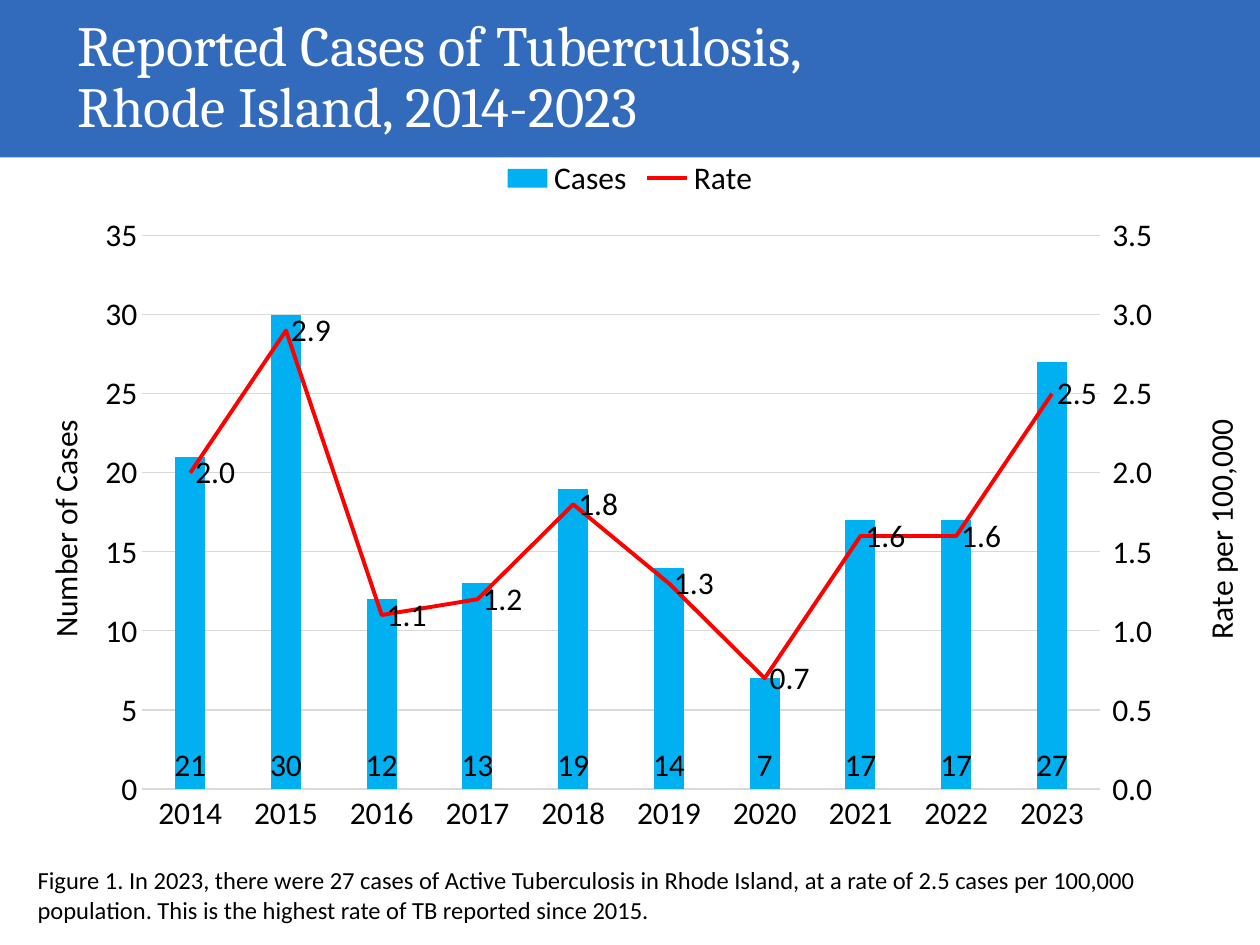
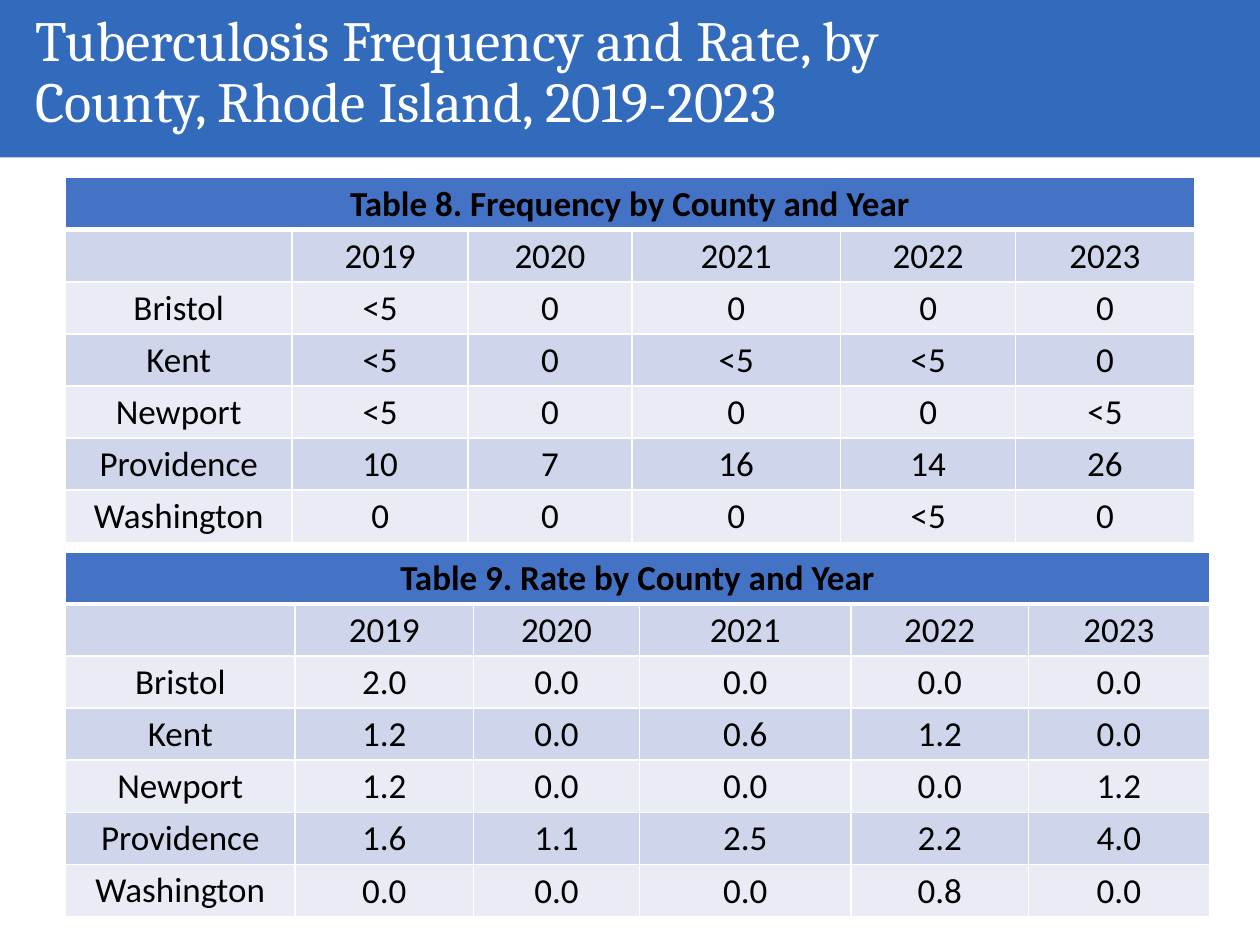
from copy import deepcopy

from lxml.etree import SubElement
from pptx import Presentation
from pptx.chart.axis import ValueAxis
from pptx.chart.data import CategoryChartData
from pptx.dml.color import RGBColor
from pptx.enum.chart import XL_CHART_TYPE as ChartType
from pptx.enum.chart import XL_LABEL_POSITION as LabelPosition
from pptx.enum.chart import XL_LEGEND_POSITION as LegendPosition
from pptx.enum.chart import XL_MARKER_STYLE as MarkerStyle
from pptx.enum.chart import XL_TICK_MARK as TickMark
from pptx.enum.shapes import MSO_SHAPE as Shape
from pptx.enum.text import MSO_ANCHOR as Anchor
from pptx.enum.text import PP_ALIGN as Align
from pptx.oxml import parse_xml
from pptx.oxml.ns import nsdecls, qn
from pptx.util import Inches, Pt

WIDTH, HEIGHT = 10, 7.5
BAND_HEIGHT = HEIGHT / 6
BODY_FONT, TITLE_FONT = "Calibri", "Cambria"
COLORS = {
    "band": "326ABC", "white": "FFFFFF", "text": "000000", "grid": "D9D9D9",
    "cases": "00B0F0", "rate": "FF0000",
    "header": "4472C4", "odd": "CFD5EA", "even": "E9EBF5",
}

CASES_TITLE = "Reported Cases of Tuberculosis,\vRhode Island, 2014-2023"
COUNTY_TITLE = "Tuberculosis Frequency and Rate, by County, Rhode Island, 2019-2023"
CAPTION = (
    "Figure 1. In 2023, there were 27 cases of Active Tuberculosis in Rhode Island, "
    "at a rate of 2.5 cases per 100,000 population. "
    "This is the highest rate of TB reported since 2015."
)
CHART_YEARS = [str(year) for year in range(2014, 2024)]
CASES = [21, 30, 12, 13, 19, 14, 7, 17, 17, 27]
RATES = [2, 2.9, 1.1, 1.2, 1.8, 1.3, 0.7, 1.6, 1.6, 2.5]

TABLE_YEARS = ["", "2019", "2020", "2021", "2022", "2023"]
COLUMN_SHARES = [1.8, 1.4, 1.3, 1.66, 1.39, 1.42]
ROW_HEIGHT = 0.41
FREQUENCIES = [
    ["Bristol", "<5", "0", "0", "0", "0"],
    ["Kent", "<5", "0", "<5", "<5", "0"],
    ["Newport", "<5", "0", "0", "0", "<5"],
    ["Providence", "10", "7", "16", "14", "26"],
    ["Washington", "0", "0", "0", "<5", "0"],
]
COUNTY_RATES = [
    ["Bristol", "2.0", "0.0", "0.0", "0.0", "0.0"],
    ["Kent", "1.2", "0.0", "0.6", "1.2", "0.0"],
    ["Newport", "1.2", "0.0", "0.0", "0.0", "1.2"],
    ["Providence", "1.6", "1.1", "2.5", "2.2", "4.0"],
    ["Washington", "0.0", "0.0", "0.0", "0.8", "0.0"],
]
TABLES = [
    ("Table 8. Frequency by County and Year", FREQUENCIES, 1.41, 8.96),
    ("Table 9. Rate by County and Year", COUNTY_RATES, 4.38, 9.08),
]


def color(name):
    return RGBColor.from_string(COLORS[name])


def paint(fill, name):
    fill.solid()
    fill.fore_color.rgb = color(name)


def style_font(font, size, name="text", family=BODY_FONT, bold=False):
    font.size, font.name, font.bold = Pt(size), family, bold
    font.color.rgb = color(name)


def add_text(slide, text, box, anchor=Anchor.TOP):
    frame = slide.shapes.add_textbox(*map(Inches, box)).text_frame
    frame.word_wrap = True
    frame.vertical_anchor = anchor
    frame.text = text
    return frame.paragraphs[0]


def add_titled_slide(presentation, title, left, top):
    slide = presentation.slides.add_slide(presentation.slide_layouts[6])
    band = slide.shapes.add_shape(Shape.RECTANGLE, 0, 0, Inches(WIDTH), Inches(BAND_HEIGHT))
    band.shadow.inherit = False
    band.line.fill.background()
    paint(band.fill, "band")
    paragraph = add_text(slide, title, (left, top, 8, 1.03), Anchor.MIDDLE)
    paragraph.line_spacing = 0.9
    style_font(paragraph.font, 32.4, "white", TITLE_FONT)
    return slide


def remove_children(element, tag):
    for child in element.findall(qn(tag)):
        element.remove(child)


def place(element, index, **shares):
    """Give a chart part a fixed place, as shares of the chart's size."""
    remove_children(element, "c:layout")
    layout = parse_xml(f"<c:layout {nsdecls('c')}><c:manualLayout/></c:layout>")
    manual = layout[0]
    if "w" in shares:
        SubElement(manual, qn("c:layoutTarget"), val="inner")
    for mode in ("xMode", "yMode"):
        SubElement(manual, qn(f"c:{mode}"), val="edge")
    for key, share in shares.items():
        SubElement(manual, qn(f"c:{key}"), val=str(share))
    element.insert(index, layout)


def style_value_axis(axis, title, maximum, number_format, tick_mark, x):
    axis.minimum_scale, axis.maximum_scale = 0, maximum
    axis.major_unit = maximum / 7
    axis.major_tick_mark = tick_mark
    axis.format.line.fill.background()
    axis.tick_labels.number_format = number_format
    axis.tick_labels.number_format_is_linked = False
    style_font(axis.tick_labels.font, 18)
    frame = axis.axis_title.text_frame
    frame.text = title
    style_font(frame.paragraphs[0].font, 18)
    body = frame._txBody.bodyPr
    body.set("rot", "-5400000")
    body.set("vert", "horz")
    place(axis.axis_title._element, 1, x=x, y=0.385)


def move_rate_to_right_axis(chart):
    """Turn the second series into a line with its own pair of axes."""
    plot_area = chart._chartSpace.chart.plotArea
    bars = plot_area.find(qn("c:barChart"))
    rate = bars.findall(qn("c:ser"))[1]
    remove_children(rate, "c:invertIfNegative")
    lines = parse_xml(
        f'<c:lineChart {nsdecls("c")}><c:grouping val="standard"/><c:varyColors val="0"/>'
        '<c:marker val="1"/><c:axId val="501"/><c:axId val="502"/></c:lineChart>'
    )
    lines.insert(2, rate)
    bars.addnext(lines)
    category = deepcopy(plot_area.find(qn("c:catAx")))
    value = deepcopy(plot_area.find(qn("c:valAx")))
    for axis, own, other in ((category, "501", "502"), (value, "502", "501")):
        axis.find(qn("c:axId")).set("val", own)
        axis.find(qn("c:crossAx")).set("val", other)
    category.find(qn("c:delete")).set("val", "1")
    value.find(qn("c:axPos")).set("val", "r")
    value.find(qn("c:crosses")).set("val", "max")
    plot_area.findall(qn("c:valAx"))[-1].addnext(value)
    value.addnext(category)
    return ValueAxis(value)


def label_values(series, position, number_format):
    labels = series.data_labels
    labels.show_value = True
    labels.position = position
    labels.number_format = number_format
    labels.number_format_is_linked = False
    style_font(labels.font, 18)


def add_cases_chart(slide):
    data = CategoryChartData()
    data.categories = CHART_YEARS
    data.add_series("Cases", CASES)
    data.add_series("Rate", RATES, "0.0")
    box = map(Inches, (0, 1.14, WIDTH, 5.58))
    chart = slide.shapes.add_chart(ChartType.COLUMN_CLUSTERED, *box, data).chart
    style_font(chart.font, 18)
    chart.has_title = False
    chart.has_legend = True
    chart.legend.position = LegendPosition.TOP
    chart.legend.include_in_layout = False
    style_font(chart.legend.font, 18)

    years, left_axis = chart.category_axis, chart.value_axis
    right_axis = move_rate_to_right_axis(chart)
    right_axis.has_major_gridlines = False
    style_value_axis(left_axis, "Number of Cases", 35, "0", TickMark.NONE, 0.03)
    style_value_axis(right_axis, "Rate per 100,000", 3.5, "0.0", TickMark.OUTSIDE, 0.947)
    years.major_tick_mark = TickMark.NONE
    style_font(years.tick_labels.font, 18)
    for line in (years.format.line, left_axis.major_gridlines.format.line):
        line.color.rgb = color("grid")
        line.width = Pt(0.75)

    bars, lines = chart.plots
    bars.gap_width = 219
    bars.vary_by_categories = False
    cases, rate = bars.series[0], lines.series[0]
    paint(cases.format.fill, "cases")
    label_values(cases, LabelPosition.INSIDE_BASE, "0")
    rate.format.line.color.rgb = color("rate")
    rate.format.line.width = Pt(2.25)
    rate.marker.style = MarkerStyle.NONE
    rate.smooth = False
    label_values(rate, LabelPosition.RIGHT, "0.0")
    place(chart._chartSpace.chart.plotArea, 0, x=0.113, y=0.131, w=0.76, h=0.787)


def add_borders(cell, top, bottom):
    properties = cell._tc.get_or_add_tcPr()
    for index, (side, width) in enumerate((("L", 1), ("R", 1), ("T", top), ("B", bottom))):
        properties.insert(index, parse_xml(
            f'<a:ln{side} {nsdecls("a")} w="{Pt(width)}"><a:solidFill>'
            f'<a:srgbClr val="{COLORS["white"]}"/></a:solidFill></a:ln{side}>'
        ))


def add_county_table(slide, title, counties, top, width):
    rows = [[title] + [""] * 5, TABLE_YEARS, *counties]
    box = map(Inches, (0.52, top, width, ROW_HEIGHT * len(rows)))
    table = slide.shapes.add_table(len(rows), len(TABLE_YEARS), *box).table
    for column, share in zip(table.columns, COLUMN_SHARES):
        column.width = Inches(width * share / sum(COLUMN_SHARES))
    for row_index, texts in enumerate(rows):
        table.rows[row_index].height = Inches(ROW_HEIGHT)
        fill = "header" if row_index == 0 else ("even", "odd")[row_index % 2]
        for column_index, text in enumerate(texts):
            cell = table.cell(row_index, column_index)
            is_value = row_index > 1 and column_index > 0
            cell.margin_left = cell.margin_right = Inches(0.01 if is_value else 0.07)
            cell.margin_top = Inches(0.01 if is_value else 0.04)
            cell.margin_bottom = Inches(0 if is_value else 0.04)
            cell.vertical_anchor = Anchor.MIDDLE
            cell.text = text
            paragraph = cell.text_frame.paragraphs[0]
            paragraph.alignment = Align.CENTER
            style_font(paragraph.font, 20, bold=row_index == 0)
            paint(cell.fill, fill)
            add_borders(cell, 3 if row_index == 1 else 1, 3 if row_index == 0 else 1)
    table.cell(0, 0).merge(table.cell(0, len(TABLE_YEARS) - 1))


def main():
    presentation = Presentation()
    presentation.slide_width, presentation.slide_height = Inches(WIDTH), Inches(HEIGHT)
    cases_slide = add_titled_slide(presentation, CASES_TITLE, 0.52, 0.11)
    caption = add_text(cases_slide, CAPTION, (0.2, 6.82, 9.28, 0.57))
    style_font(caption.font, 14)
    add_cases_chart(cases_slide)
    county_slide = add_titled_slide(presentation, COUNTY_TITLE, 0.18, 0.07)
    for table in TABLES:
        add_county_table(county_slide, *table)
    presentation.save("out.pptx")


if __name__ == "__main__":
    main()
